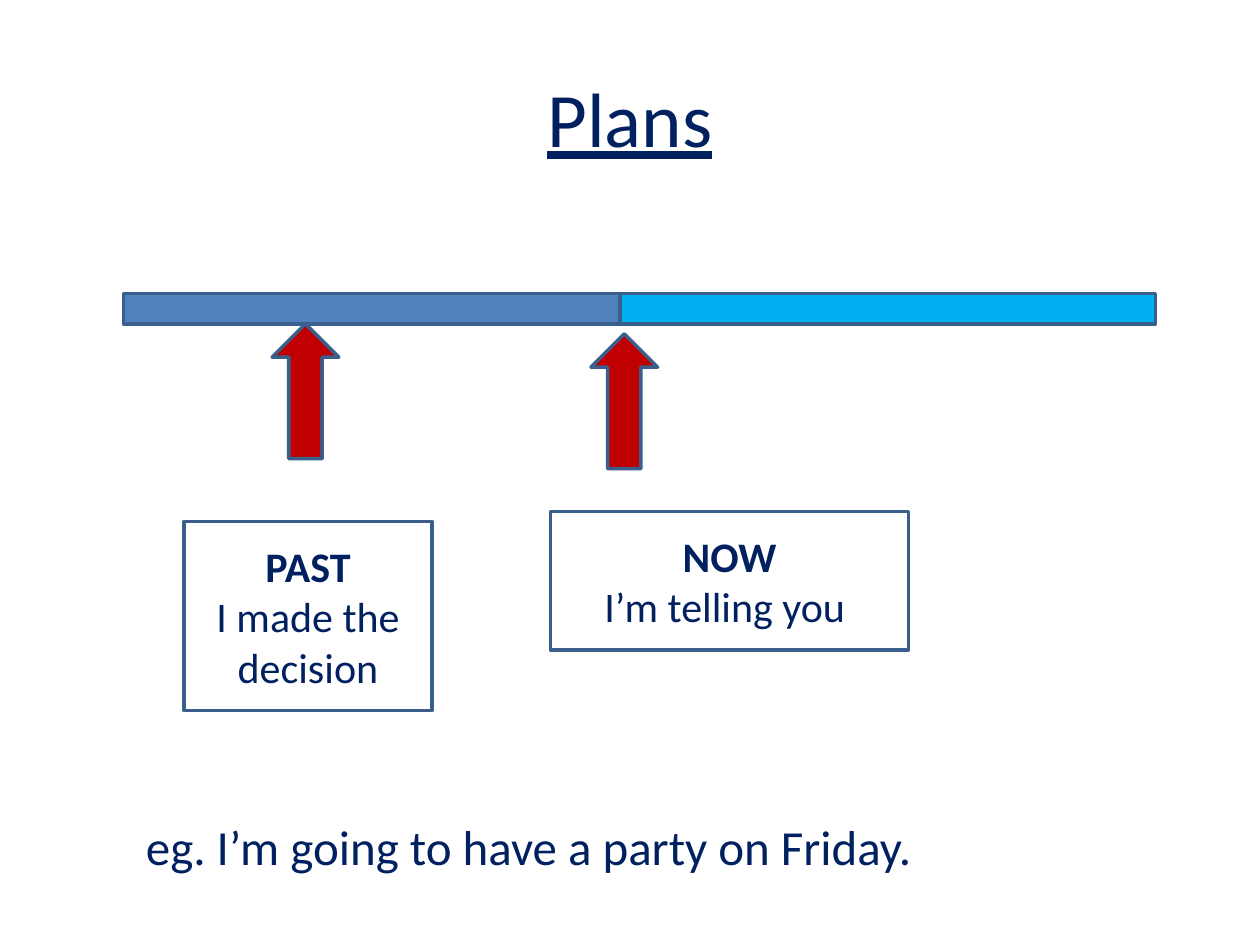
from dataclasses import dataclass

from pptx import Presentation
from pptx.dml.color import RGBColor
from pptx.enum.shapes import MSO_SHAPE as Shape
from pptx.enum.text import MSO_ANCHOR as Anchor, PP_ALIGN as Align
from pptx.util import Inches, Pt

WIDTH, HEIGHT = Inches(10), Inches(7.5)
NAVY, OUTLINE, WHITE, RED = "002060", "3A5F8C", "FFFFFF", "C00000"
BAR_TOP, BAR_HEIGHT = 31.07, 3.2
ARROW_WIDTH, ARROW_HEIGHT = 5.3, 14.27


@dataclass
class Area:
    """A rectangle in percent of the slide's width and height."""
    left: float
    top: float
    width: float
    height: float

    def emu(self) -> list[int]:
        return [round(share * side / 100) for share, side in
                zip((self.left, self.top, self.width, self.height),
                    (WIDTH, HEIGHT) * 2)]


@dataclass
class Block:
    area: Area
    fill: str
    kind: Shape = Shape.RECTANGLE
    lines: tuple[str, ...] = ()


def rgb(value: str) -> RGBColor:
    return RGBColor.from_string(value)


def write(sp, lines: tuple[str, ...], align: Align, anchor: Anchor,
          formats: list[dict]) -> None:
    """Write one paragraph per line, each with its own font format."""
    tf = sp.text_frame
    tf.word_wrap = True
    tf.vertical_anchor = anchor
    for i, (line, fmt) in enumerate(zip(lines, formats)):
        p = tf.paragraphs[0] if i == 0 else tf.add_paragraph()
        p.alignment = align
        r = p.add_run()
        r.text = line
        r.font.color.rgb = rgb(NAVY)
        for name, value in {"name": "Calibri", **fmt}.items():
            setattr(r.font, name, value)


def draw_block(s, block: Block) -> None:
    sp = s.shapes.add_shape(block.kind, *block.area.emu())
    sp.shadow.inherit = False
    sp.fill.solid()
    sp.fill.fore_color.rgb = rgb(block.fill)
    sp.line.color.rgb = rgb(OUTLINE)
    sp.line.width = Pt(2)
    if block.lines:
        write(sp, block.lines, Align.CENTER, Anchor.MIDDLE,
              [{"size": Pt(24), "bold": bold} for bold in (True, False)])


def draw_text(s, area: Area, text: str, align: Align, anchor: Anchor,
              fmt: dict) -> None:
    write(s.shapes.add_textbox(*area.emu()), (text,), align, anchor, [fmt])


BLOCKS = [
    Block(Area(9.8, BAR_TOP, 39.4, BAR_HEIGHT), "4F81BD"),
    Block(Area(49.2, BAR_TOP, 42.5, BAR_HEIGHT), "00B0F0"),
    Block(Area(46.9, 35.33, ARROW_WIDTH, ARROW_HEIGHT), RED, Shape.UP_ARROW),
    Block(Area(21.6, BAR_TOP + BAR_HEIGHT, ARROW_WIDTH, ARROW_HEIGHT), RED,
          Shape.UP_ARROW),
    Block(Area(14.6, 55.2, 19.7, 20), WHITE,
          lines=("PAST", "I made the decision")),
    Block(Area(43.7, 54.13, 28.4, 14.67), WHITE,
          lines=("NOW", "I’m telling you ")),
]


def main() -> None:
    prs = Presentation()
    prs.slide_width, prs.slide_height = WIDTH, HEIGHT
    s = prs.slides.add_slide(prs.slide_layouts[6])
    draw_text(s, Area(5, 4, 90, 16.67), "Plans", Align.CENTER, Anchor.MIDDLE,
              {"size": Pt(44), "underline": True})
    for block in BLOCKS:
        draw_block(s, block)
    draw_text(s, Area(10.6, 85.73, 81.9, 7.6),
              "eg. I’m going to have a party on Friday.",
              Align.LEFT, Anchor.TOP, {"size": Pt(28)})
    prs.save("out.pptx")


if __name__ == "__main__":
    main()
